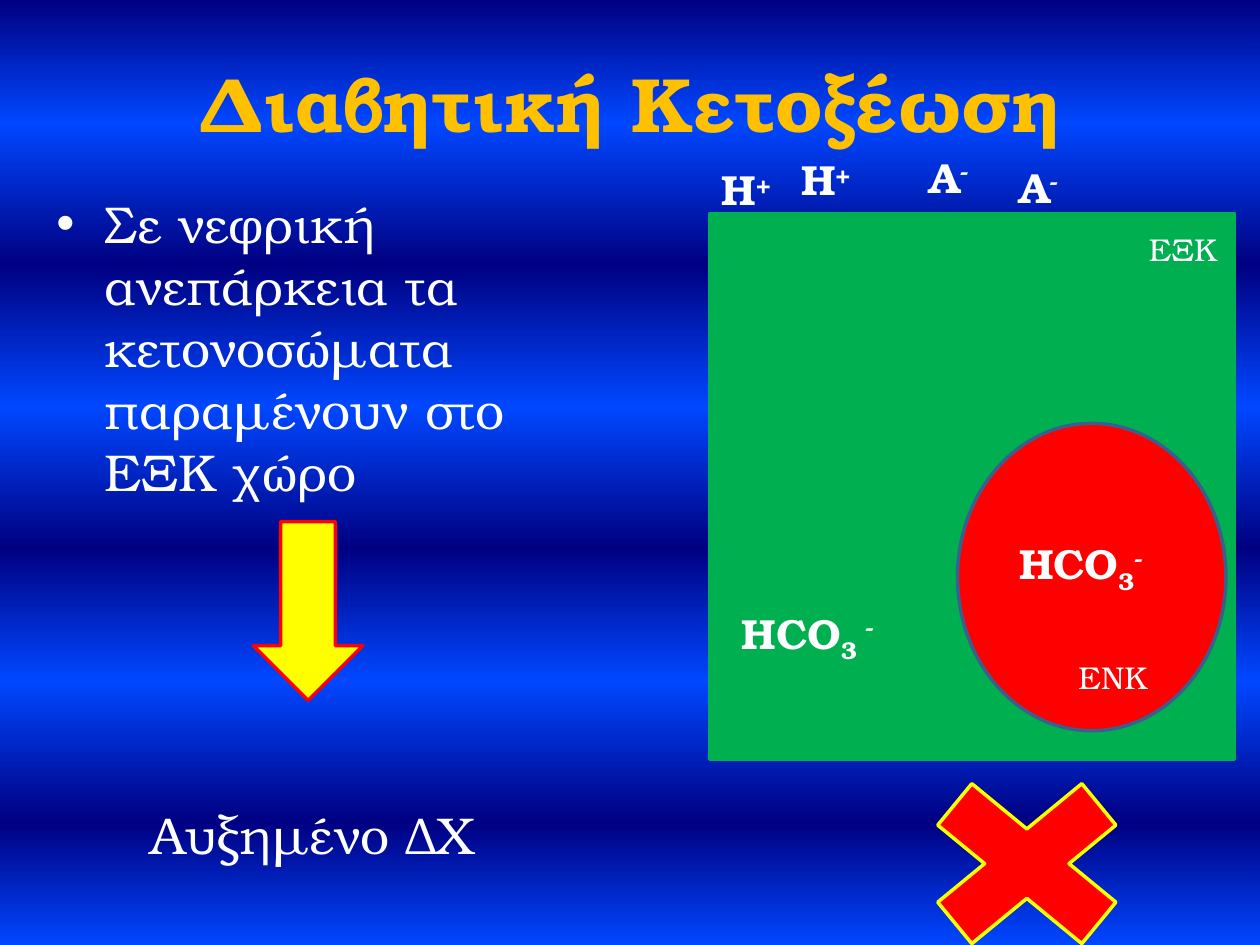
"""Builds a slide on diabetic ketoacidosis and its fluid compartments."""
from lxml import etree
from pptx import Presentation
from pptx.dml.color import RGBColor
from pptx.enum.shapes import MSO_SHAPE
from pptx.enum.text import MSO_ANCHOR, PP_ALIGN
from pptx.oxml.ns import qn
from pptx.util import Inches, Pt

LEFT, CENTER = PP_ALIGN.LEFT, PP_ALIGN.CENTER
TOP, MIDDLE = MSO_ANCHOR.TOP, MSO_ANCHOR.MIDDLE
FONT = "TeX Gyre Bonum"
W, H = Inches(10), Inches(7.5)
SUB, SUP = -25000, 30000

COLORS = {"navy": "000082", "blue": "0047FF", "gold": "FFC000", "white": "FFFFFF",
          "green": "00B050", "red": "FF0000", "yellow": "FFFF00", "steel": "3A5F8C"}

STOPS = [0, 13, 28, 43, 58, 72, 87, 100]
TITLE = "Διαβητική Κετοξέωση"
BODY = "Σε νεφρική ανεπάρκεια τα κετονοσώματα παραμένουν στο ΕΞΚ χώρο"
RESULT = "Αυξημένο ΔΧ"

# Boxes are (left, top, width, height) in percent of the slide.
SHAPES = [
    (MSO_SHAPE.RECTANGLE, (56.3, 22.67, 41.7, 57.73), "green", "green"),
    (MSO_SHAPE.OVAL, (76, 44.8, 21.3, 32.53), "red", "steel"),
    (MSO_SHAPE.DOWN_ARROW, (20.1, 55.2, 8.7, 18.93), "yellow", "red"),
    (MSO_SHAPE.MATH_MULTIPLY, (70.5, 79.33, 22, 24.13), "red", "yellow"),
]
PROTON = [("H", 0), ("+", SUP)]
ANION = [("A", 0), ("-", SUP)]
IONS = [
    (PROTON, 56.3, 16.67), (PROTON, 62.6, 15.6),
    (ANION, 72.8, 15.33), (ANION, 79.9, 16.4),
    ([("HCO", 0), ("3", SUB), ("-", SUP)], 79.9, 56.27),
    ([("HCO", 0), ("3 ", SUB), ("-", SUP)], 57.9, 63.6),
]
SPACES = [("ΕΞΚ", 90.2, 23.73), ("ENK", 84.6, 68.93)]


def place(box):
    x, y, w, h = box
    return [int(v * side / 100) for v, side in ((x, W), (y, H), (w, W), (h, H))]


def rgb(name):
    return RGBColor.from_string(COLORS[name])


def add_text(p, text, size=24, color="white", bold=False, align=LEFT, before=0):
    p.alignment = align
    p.space_before = Pt(before)
    for part, base in [(text, 0)] if isinstance(text, str) else text:
        r = p.add_run()
        r.text = part
        r.font.name, r.font.size, r.font.bold = FONT, Pt(size), bold
        r.font.color.rgb = rgb(color)
        if base:
            r._r.get_or_add_rPr().set("baseline", str(base))


def add_box(s, box, anchor=TOP):
    tf = s.shapes.add_textbox(*place(box)).text_frame
    tf.word_wrap = True
    tf.vertical_anchor = anchor
    return tf


def add_bullet(p):
    pPr = p._p.get_or_add_pPr()
    pPr.set("marL", str(Inches(0.38)))
    pPr.set("indent", str(-Inches(0.38)))
    etree.SubElement(pPr, qn("a:buFont")).set("typeface", "Arial")
    etree.SubElement(pPr, qn("a:buChar")).set("char", "•")


def paint_background(s):
    fill = s.background.fill
    fill.gradient()
    fill.gradient_angle = 270
    stops = s._element.find(".//" + qn("a:gsLst"))
    for old in list(stops):
        stops.remove(old)
    for i, pos in enumerate(STOPS):
        gs = etree.SubElement(stops, qn("a:gs"))
        gs.set("pos", str(pos * 1000))
        color = COLORS["blue" if i % 2 else "navy"]
        etree.SubElement(gs, qn("a:srgbClr")).set("val", color)


def main():
    prs = Presentation()
    prs.slide_width, prs.slide_height = W, H
    s = prs.slides.add_slide(prs.slide_layouts[6])
    paint_background(s)

    for kind, box, fill, line in SHAPES:
        sp = s.shapes.add_shape(kind, *place(box))
        sp.shadow.inherit = False
        sp.fill.solid()
        sp.fill.fore_color.rgb = rgb(fill)
        sp.line.color.rgb = rgb(line)
        sp.line.width = Pt(2)

    tf = add_box(s, (5, 4, 90, 13.47), MIDDLE)
    add_text(tf.paragraphs[0], TITLE, size=44, color="gold", bold=True, align=CENTER)

    tf = add_box(s, (3.5, 19.6, 42.6, 69.73))
    add_text(tf.paragraphs[0], BODY, size=29.6)
    add_bullet(tf.paragraphs[0])
    add_text(tf.add_paragraph(), RESULT, size=29.6, align=CENTER, before=172)

    for parts, x, y in IONS:
        add_text(add_box(s, (x, y, 14.2, 6.67)).paragraphs[0], parts, bold=True)
    for name, x, y in SPACES:
        add_text(add_box(s, (x, y, 7.9, 5.33)).paragraphs[0], name, size=18)

    prs.save("out.pptx")


if __name__ == "__main__":
    main()
